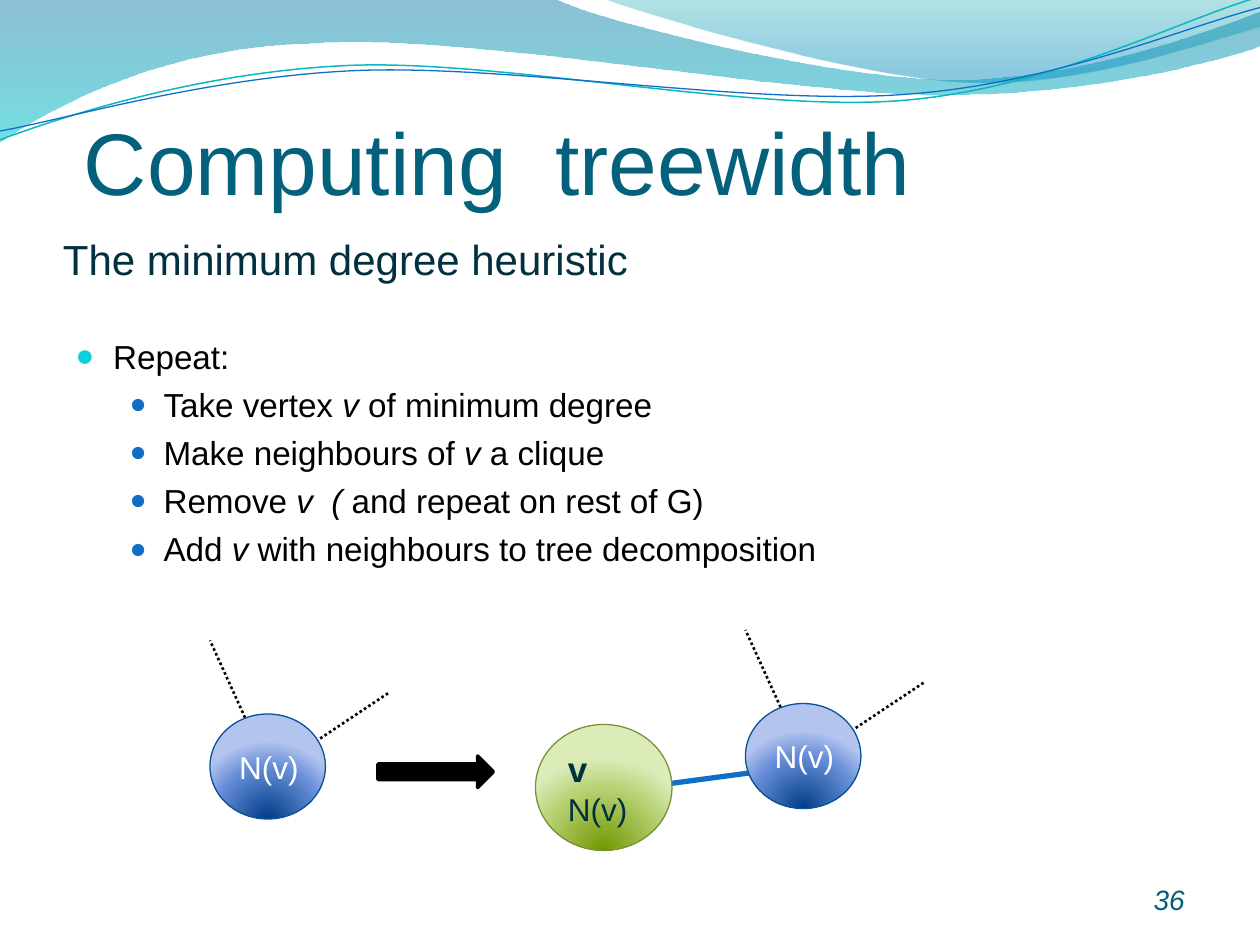
from math import cos, radians, sin

from lxml import etree
from pptx import Presentation
from pptx.dml.color import RGBColor
from pptx.enum.dml import MSO_LINE
from pptx.enum.shapes import MSO_CONNECTOR, MSO_SHAPE
from pptx.enum.text import MSO_ANCHOR, PP_ALIGN
from pptx.oxml.ns import qn
from pptx.util import Inches, Pt

STRAIGHT, DOTTED = MSO_CONNECTOR.STRAIGHT, MSO_LINE.ROUND_DOT
OVAL, ARROW = MSO_SHAPE.OVAL, MSO_SHAPE.RIGHT_ARROW
TOP, MIDDLE, BOTTOM = MSO_ANCHOR.TOP, MSO_ANCHOR.MIDDLE, MSO_ANCHOR.BOTTOM
LEFT, RIGHT = PP_ALIGN.LEFT, PP_ALIGN.RIGHT

FONT = "Arial"
BLACK = RGBColor(0, 0, 0)
WHITE = RGBColor(255, 255, 255)
TITLE_TEAL = RGBColor(0x04, 0x61, 0x7B)
DARK_TEAL = RGBColor(0x02, 0x30, 0x3E)
NUMBER_TEAL = RGBColor(0x04, 0x5D, 0x75)
BLUE = RGBColor(0x0F, 0x6F, 0xC6)
CYAN = RGBColor(0x0B, 0xD0, 0xD9)
WAVE_TEAL = RGBColor(0x0A, 0xB8, 0xBF)
BLUE_EDGE = RGBColor(0x09, 0x52, 0x95)
GREEN_EDGE = RGBColor(0x7B, 0x91, 0x35)

# Gradient stops: position %, colour, opacity %
WIDE_WAVE_STOPS = [(0, RGBColor(0x00, 0x74, 0xA1), 45), (100, RGBColor(0x00, 0xC6, 0xCF), 55)]
RIGHT_WAVE_STOPS = [(0, RGBColor(0x00, 0xA1, 0xA9), 30), (80, RGBColor(0x00, 0x8B, 0xBF), 45)]
BLUE_STOPS = [(0, RGBColor(0x00, 0x3D, 0x87), 100), (68, RGBColor(0x66, 0x8D, 0xD7), 100),
              (100, RGBColor(0xB3, 0xC4, 0xEF), 100)]
GREEN_STOPS = [(0, RGBColor(0x72, 0x98, 0x00), 100), (68, RGBColor(0xB8, 0xD2, 0x75), 100),
               (100, RGBColor(0xDB, 0xEC, 0xB9), 100)]

# The slide is a grid of 120 columns by 90 rows
CELL = Inches(10) // 120
CURVE_TILT = -2.7

# Wave outlines in inches: a start, then line ends (2 numbers) or Bezier curves (6)
WIDE_WAVE = [(0, 0), (4.4, -0.01), (4.76, 0.17, 6.64, 0.63, 7.58, 0.63),
             (8.53, 0.63, 9.58, 0.26, 10, 0.09), (10.01, 0.36),
             (9.83, 0.44, 8.7, 0.76, 7.46, 0.75), (6.22, 0.75, 3.82, 0.28, 2.57, 0.34),
             (1.29, 0.36, 0.46, 0.83, -0.01, 1.13), (0, 0)]
RIGHT_WAVE = [(4.79, -0.01), (5.09, 0.11, 6.82, 0.62, 7.69, 0.65),
              (8.56, 0.69, 9.61, 0.32, 10, 0.21), (10, 0), (4.79, -0.01)]
TEAL_CURVE = [(0, 1.11), (0.48, 0.93, 1.58, 0.57, 2.77, 0.52),
              (3.95, 0.47, 5.93, 0.89, 7.13, 0.8), (8.33, 0.71, 9.38, 0.15, 9.98, -0.02)]
BLUE_CURVE = [(0, 1.04), (0.47, 0.96, 1.64, 0.61, 2.83, 0.56),
              (4.03, 0.51, 5.97, 0.84, 7.17, 0.75), (8.36, 0.67, 9.41, 0.21, 10, 0.06)]

# Steps as (text, italic) runs
STEPS = [
    [("Take vertex ", False), ("v ", True), ("of minimum degree", False)],
    [("Make neighbours of ", False), ("v", True), (" a clique", False)],
    [("Remove ", False), ("v  ( ", True), ("and repeat on rest of G)", False)],
    [("Add ", False), ("v", True), (" with neighbours to tree decomposition", False)],
]


def grid(*cells):
    return [round(cell * CELL) for cell in cells]


def add_node(parent, tag, **attributes):
    return etree.SubElement(parent, qn(tag), {key: str(value) for key, value in attributes.items()})


def fill_gradient(shape, stops, radial=False):
    """Fill from top to bottom, or radially from a focus below the shape."""
    gradient = etree.Element(qn("a:gradFill"), rotWithShape="1")
    stop_list = add_node(gradient, "a:gsLst")
    for position, color, opacity in stops:
        stop = add_node(stop_list, "a:gs", pos=position * 1000)
        color_node = add_node(stop, "a:srgbClr", val=color)
        if opacity < 100:
            add_node(color_node, "a:alpha", val=opacity * 1000)
    if radial:
        focus = add_node(gradient, "a:path", path="circle")
        add_node(focus, "a:fillToRect", l=50000, t=130000, r=50000, b=-30000)
    else:
        add_node(gradient, "a:lin", ang=5400000, scaled=1)
    properties = shape._element.spPr
    geometry = [node for node in properties if node.tag in (qn("a:custGeom"), qn("a:prstGeom"))][0]
    geometry.addnext(gradient)


def draw_outline(shape, box, outline, tilt):
    """Write the outline into the shape, turned back so that the tilt restores it."""
    left, top, width, height = box
    cosine, sine = cos(radians(-tilt)), sin(radians(-tilt))
    outline_node = next(shape._element.iter(qn("a:path")))
    for node in list(outline_node):
        outline_node.remove(node)
    for index, segment in enumerate(outline):
        tag = "a:cubicBezTo" if len(segment) == 6 else "a:lnTo" if index else "a:moveTo"
        command = add_node(outline_node, tag)
        for x, y in zip(segment[::2], segment[1::2]):
            dx, dy = x - left - width / 2, y - top - height / 2
            add_node(command, "a:pt", x=Inches(width / 2 + dx * cosine - dy * sine),
                     y=Inches(height / 2 + dx * sine + dy * cosine))


def add_wave(slide, box, outline, stops=None, color=None, width=0, tilt=0):
    left, top, right, bottom = box[0], box[1], box[0] + box[2], box[1] + box[3]
    builder = slide.shapes.build_freeform(Inches(left), Inches(top))
    builder.add_line_segments([(Inches(right), Inches(bottom))], close=False)
    shape = builder.convert_to_shape()
    draw_outline(shape, box, outline, tilt)
    shape.rotation = tilt
    shape.shadow.inherit = False
    if stops:
        add_node(next(shape._element.iter(qn("a:path"))), "a:close")
        fill_gradient(shape, stops)
        shape.line.fill.background()
    else:
        shape.fill.background()
        shape.line.color.rgb = color
        shape.line.width = Pt(width)


def add_run(paragraph, text, size, color, bold=False, italic=False):
    run = paragraph.add_run()
    run.text = text
    font = run.font
    font.name, font.size, font.bold, font.italic = FONT, Pt(size), bold, italic
    font.color.rgb = color


def add_text_box(slide, box, anchor=TOP, flush=False):
    frame = slide.shapes.add_textbox(*grid(*box)).text_frame
    frame.word_wrap = True
    frame.vertical_anchor = anchor
    if flush:
        frame.margin_left = frame.margin_right = frame.margin_bottom = 0
    return frame


def add_label(slide, box, text, size, color):
    frame = add_text_box(slide, box, BOTTOM, flush=True)
    add_run(frame.paragraphs[0], text, size, color)


def add_bullet(paragraph, runs, level, margin, hanging, color, bullet_size):
    paragraph.level = level
    paragraph.space_before = Pt(4.7)
    properties = paragraph._p.get_or_add_pPr()
    properties.set("marL", str(Inches(margin)))
    properties.set("indent", str(-Inches(hanging)))
    add_node(add_node(properties, "a:buClr"), "a:srgbClr", val=color)
    add_node(properties, "a:buSzPct", val=bullet_size * 1000)
    add_node(properties, "a:buFont", typeface=FONT)
    add_node(properties, "a:buChar", char="●")
    for text, italic in runs:
        add_run(paragraph, text, 19, BLACK, italic=italic)


def add_edge(slide, start, end, color=BLACK, width=1.5, dash=DOTTED):
    edge = slide.shapes.add_connector(STRAIGHT, *grid(*start, *end))
    edge.line.color.rgb = color
    edge.line.width = Pt(width)
    edge.line.dash_style = dash
    add_node(edge._element.spPr, "a:effectLst")


def add_bag(slide, box, stops, edge_color):
    """Add a round tree node and return its paragraph."""
    bag = slide.shapes.add_shape(OVAL, *grid(*box))
    bag.shadow.inherit = False
    fill_gradient(bag, stops, radial=True)
    bag.line.color.rgb = edge_color
    bag.line.width = Pt(0.75)
    bag.text_frame.word_wrap = False
    bag.text_frame.vertical_anchor = MIDDLE
    paragraph = bag.text_frame.paragraphs[0]
    paragraph.alignment = LEFT
    return paragraph


def add_neighbour_bag(slide, left, top):
    add_edge(slide, (left + 8, top + 4), (left + 17, top - 2))
    add_edge(slide, (left + 5, top + 4), (left, top - 7))
    paragraph = add_bag(slide, (left, top, 11, 10), BLUE_STOPS, BLUE_EDGE)
    add_run(paragraph, "N(v)", 18, WHITE)


def add_arrow(slide, box):
    arrow = slide.shapes.add_shape(ARROW, *grid(*box))
    arrow.shadow.inherit = False
    arrow.fill.solid()
    arrow.fill.fore_color.rgb = arrow.line.color.rgb = BLACK
    arrow.line.width = Pt(2)


def main():
    presentation = Presentation()
    presentation.slide_width, presentation.slide_height = grid(120, 90)
    slide = presentation.slides.add_slide(presentation.slide_layouts[6])
    # Waves along the top
    add_wave(slide, (-0.01, -0.01, 10.02, 1.14), WIDE_WAVE, WIDE_WAVE_STOPS)
    add_wave(slide, (4.79, -0.01, 5.21, 0.7), RIGHT_WAVE, RIGHT_WAVE_STOPS)
    add_wave(slide, (-0.02, 0.22, 10.02, 0.71), TEAL_CURVE, None, WAVE_TEAL, 0.85, CURVE_TILT)
    add_wave(slide, (-0.02, 0.3, 10.03, 0.58), BLUE_CURVE, None, BLUE, 0.75, CURVE_TILT)
    # Headings, steps and page number
    add_label(slide, (6, 20.8, 108, 6.2), "The minimum degree heuristic", 24, DARK_TEAL)
    body = add_text_box(slide, (6, 31.4, 108, 28.6))
    add_bullet(body.paragraphs[0], [("Repeat:", False)], 0, 0.3, 0.3, CYAN, 95)
    for runs in STEPS:
        add_bullet(body.add_paragraph(), runs, 1, 0.7, 0.27, BLUE, 85)
    number = add_text_box(slide, (104, 83.45, 10, 4.8)).paragraphs[0]
    number.alignment = RIGHT
    add_run(number, "36", 16, NUMBER_TEAL, italic=True)
    # Tree decomposition before and after
    add_edge(slide, (76, 73), (61, 75), BLUE, 3, None)
    add_neighbour_bag(slide, 20, 68)
    add_neighbour_bag(slide, 71, 67)
    new_bag = add_bag(slide, (51, 69, 13, 12), GREEN_STOPS, GREEN_EDGE)
    add_run(new_bag, "v", 20, DARK_TEAL, bold=True)
    new_bag.add_line_break()
    add_run(new_bag, "N(v)", 18, DARK_TEAL)
    add_label(slide, (8, 9, 108, 11.25), "Computing  treewidth", 50, TITLE_TEAL)
    add_arrow(slide, (36, 72, 11, 3))
    presentation.save("out.pptx")


if __name__ == "__main__":
    main()
